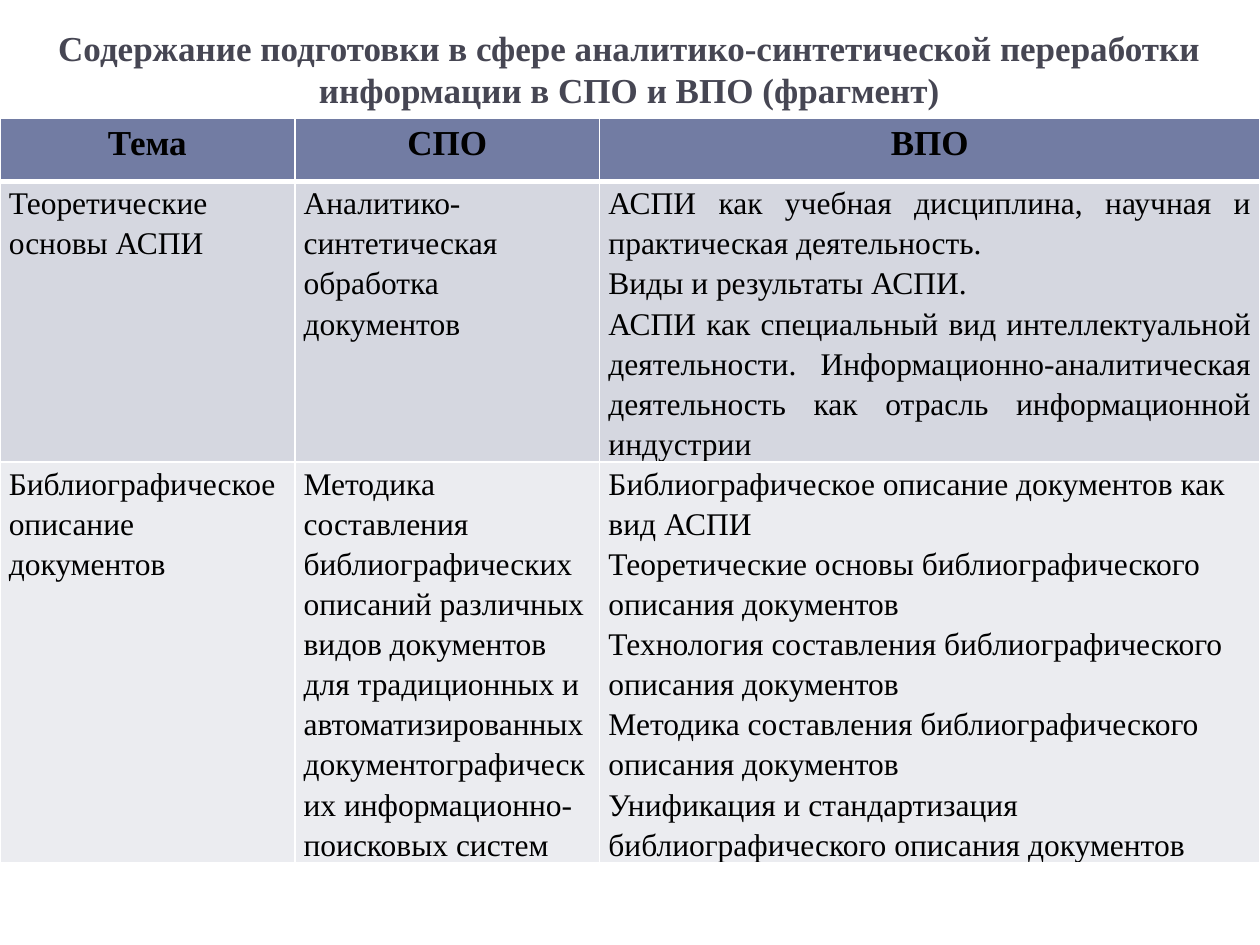
from lxml.etree import SubElement
from pptx import Presentation
from pptx.dml.color import RGBColor
from pptx.enum.text import MSO_ANCHOR, MSO_AUTO_SIZE, PP_ALIGN
from pptx.oxml.ns import qn
from pptx.util import Inches, Pt

TITLE = ("Содержание подготовки в сфере аналитико-синтетической переработки "
         "информации в СПО и ВПО (фрагмент)")
HEADINGS = ["Тема", "СПО", "ВПО"]
TOPICS = [
    [
        ["Теоретические основы АСПИ"],
        ["Аналитико-синтетическая обработка документов"],
        ["АСПИ как учебная дисциплина, научная и практическая деятельность.",
         "Виды и результаты АСПИ.",
         "АСПИ как специальный вид интеллектуальной деятельности. "
         "Информационно-аналитическая деятельность как отрасль "
         "информационной индустрии"],
    ],
    [
        ["Библиографическое описание документов"],
        ["Методика составления библиографических описаний различных видов "
         "документов для традиционных и автоматизированных "
         "документографических информационно-поисковых систем"],
        ["Библиографическое описание документов как вид АСПИ",
         "Теоретические основы библиографического описания документов",
         "Технология составления библиографического описания документов",
         "Методика составления библиографического описания документов",
         "Унификация и стандартизация библиографического описания документов"],
    ],
]
COLUMN_WIDTHS = [2.34, 2.42, 5.24]
ROW_HEIGHTS = [0.5, 2.22, 3.18]
HEADER_FILL = "727CA3"
TOPIC_FILLS = ["D5D7E0", "EBECF0"]


def rgb(value):
    return RGBColor.from_string(value)


class SlideBuilder:
    font_name = "Times New Roman"
    title_color = "464653"
    text_color = "000000"
    border_color = "FFFFFF"

    def __init__(self, slide):
        self.slide = slide

    def add_run(self, paragraph, text, size, color, bold):
        run = paragraph.add_run()
        run.text = text
        run.font.name = self.font_name
        run.font.size = Pt(size)
        run.font.bold = bold
        run.font.color.rgb = rgb(color)

    def title(self, text, left, top, width, height):
        title = self.slide.shapes.title
        title.left, title.top = Inches(left), Inches(top)
        title.width, title.height = Inches(width), Inches(height)
        frame = title.text_frame
        frame.word_wrap = True
        frame.auto_size = MSO_AUTO_SIZE.NONE
        frame.vertical_anchor = MSO_ANCHOR.MIDDLE
        paragraph = frame.paragraphs[0]
        paragraph.alignment = PP_ALIGN.CENTER
        self.add_run(paragraph, text, 20, self.title_color, True)

    def table(self, left, top, widths, heights):
        table = self.slide.shapes.add_table(
            len(heights), len(widths), Inches(left), Inches(top),
            Inches(sum(widths)), Inches(sum(heights))).table
        for column, width in zip(table.columns, widths):
            column.width = Inches(width)
        for row, height in zip(table.rows, heights):
            row.height = Inches(height)
        return table

    def borders(self, cell, **widths):
        """Draw the cell's sides, given as L, R, T and B widths in points."""
        properties = cell._tc.get_or_add_tcPr()
        for side, width in widths.items():
            line = SubElement(properties, qn(f"a:ln{side}"), w=str(Pt(width)))
            fill = SubElement(line, qn("a:solidFill"))
            SubElement(fill, qn("a:srgbClr"), val=self.border_color)

    def cell(self, cell, texts, fill, alignment, header=False):
        cell.margin_left = cell.margin_right = Inches(0.07)
        cell.margin_top = cell.margin_bottom = 0
        cell.vertical_anchor = MSO_ANCHOR.TOP
        self.borders(cell, L=1, R=1, T=1, B=3 if header else 1)
        cell.fill.solid()
        cell.fill.fore_color.rgb = rgb(fill)
        frame = cell.text_frame
        for index, text in enumerate(texts):
            paragraph = frame.add_paragraph() if index else frame.paragraphs[0]
            paragraph.alignment = alignment
            paragraph.line_spacing = 1.15
            self.add_run(paragraph, text, 20 if header else 18,
                         self.text_color, header)


def main():
    presentation = Presentation()
    presentation.slide_width = Inches(10)
    presentation.slide_height = Inches(7.5)
    builder = SlideBuilder(
        presentation.slides.add_slide(presentation.slide_layouts[5]))

    builder.title(TITLE, 0.23, 0.3, 9.53, 0.48)
    table = builder.table(0, 0.94, COLUMN_WIDTHS, ROW_HEIGHTS)
    for column, heading in enumerate(HEADINGS):
        builder.cell(table.cell(0, column), [heading], HEADER_FILL,
                     PP_ALIGN.CENTER, header=True)
    for row, (topic, fill) in enumerate(zip(TOPICS, TOPIC_FILLS), start=1):
        for column, texts in enumerate(topic):
            justified = (row, column) == (1, 2)
            builder.cell(table.cell(row, column), texts, fill,
                         PP_ALIGN.JUSTIFY if justified else PP_ALIGN.LEFT)

    presentation.save("out.pptx")


if __name__ == "__main__":
    main()
